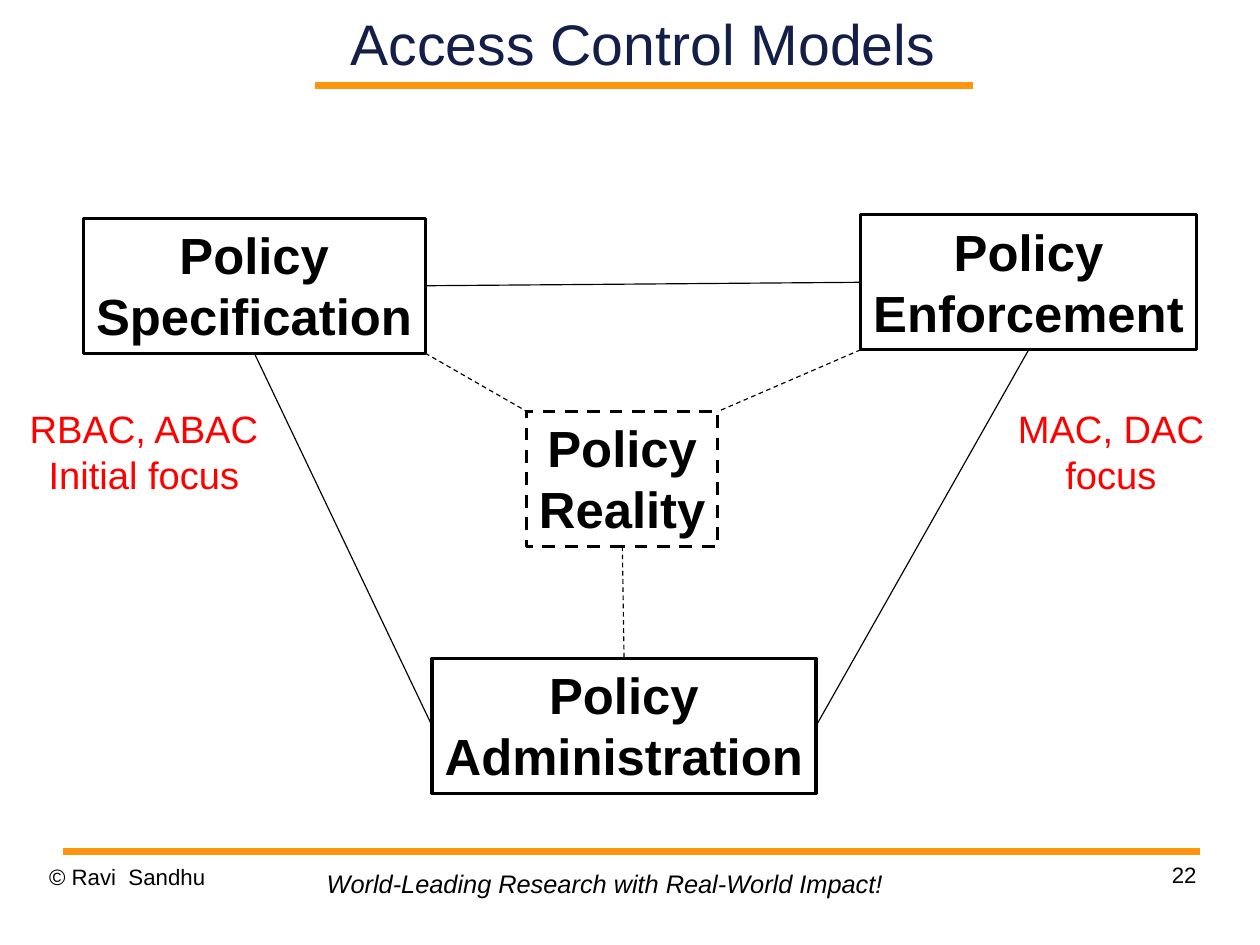
from lxml import etree
from pptx import Presentation
from pptx.dml.color import RGBColor
from pptx.enum import dml, shapes, text
from pptx.oxml.ns import qn
from pptx.util import Inches, Pt

BLACK, RED, NAVY, ORANGE = "000000", "FF0000", "131F49", "FF950E"
LEFT, CENTER, RIGHT = text.PP_ALIGN.LEFT, text.PP_ALIGN.CENTER, text.PP_ALIGN.RIGHT


def write(sp, lines, size, color=BLACK, align=CENTER, bold=False, italic=False,
          wrap=False, inset=True, anchor=text.MSO_ANCHOR.TOP):
    tf = sp.text_frame
    tf.auto_size = text.MSO_AUTO_SIZE.NONE
    tf.word_wrap = wrap
    tf.vertical_anchor = anchor
    if not inset:
        tf.margin_left = tf.margin_right = tf.margin_top = tf.margin_bottom = 0
    for i, line in enumerate(lines):
        p = tf.add_paragraph() if i else tf.paragraphs[0]
        p.alignment = align
        r = p.add_run()
        r.text = line
        r.font.name, r.font.size = "Arial", Pt(size)
        r.font.bold, r.font.italic = bold, italic
        r.font.color.rgb = RGBColor.from_string(color)


def connect(start, end, color=BLACK, width=0.75, dashed=False):
    points = [Inches(v) for v in (*start, *end)]
    cx = s.shapes.add_connector(shapes.MSO_CONNECTOR.STRAIGHT, *points)
    cx.line.color.rgb = RGBColor.from_string(color)
    cx.line.width = Pt(width)
    if dashed:
        cx.line.dash_style = dml.MSO_LINE.DASH
    etree.SubElement(cx._element.spPr, qn("a:effectLst"))
    return cx


# Slide of 28 by 21 centimetres
prs = Presentation()
prs.slide_width, prs.slide_height = Inches(28 / 2.54), Inches(21 / 2.54)
s = prs.slides.add_slide(prs.slide_layouts[5])

# Title
title = s.shapes.title
title.left, title.top = Inches(2.41), Inches(0)
title.width, title.height = Inches(6.43), Inches(0.75)
write(title, ["Access Control Models"], 36, NAVY, wrap=True, inset=False,
      anchor=text.MSO_ANCHOR.MIDDLE)

# Orange rules under the title and above the footer
connect((2.76, 0.75), (8.51, 0.75), ORANGE, 4.31)
connect((0.55, 7.45), (10.5, 7.45), ORANGE, 4.31)

# Policy boxes: left, top, width
boxes = {}
for name, x, y, w in [("Specification", 0.73, 1.91, 2.99),
                      ("Reality", 4.61, 3.6, 1.67),
                      ("Enforcement", 7.53, 1.88, 2.94),
                      ("Administration", 3.78, 5.76, 3.36)]:
    sp = s.shapes.add_shape(shapes.MSO_SHAPE.RECTANGLE,
                            Inches(x), Inches(y), Inches(w), Inches(1.18))
    sp.shadow.inherit = False
    sp.fill.background()
    sp.line.color.rgb = RGBColor.from_string(BLACK)
    sp.line.width = Pt(2)
    if name == "Reality":
        sp.line.dash_style = dml.MSO_LINE.DASH
    write(sp, ["Policy", name], 32, bold=True)
    boxes[name] = sp

# Links glued to box sides (0 top, 1 left, 2 bottom, 3 right)
for a, side_a, b, side_b, dashed in [
        ("Specification", 2, "Administration", 1, False),
        ("Specification", 3, "Enforcement", 1, False),
        ("Enforcement", 2, "Administration", 3, False),
        ("Reality", 2, "Administration", 0, True)]:
    cx = connect((0, 0), (1, 1), dashed=dashed)
    cx.begin_connect(boxes[a], side_a)
    cx.end_connect(boxes[b], side_b)

# Dashed links between box corners
connect((3.72, 3.09), (4.61, 3.6), dashed=True)
connect((7.53, 3.06), (6.28, 3.6), dashed=True)

# Red focus labels
for lines, x, w in [(["RBAC, ABAC", "Initial focus"], 0.11, 2.3),
                    (["MAC, DAC", "focus"], 8.65, 2.14)]:
    label = s.shapes.add_textbox(Inches(x), Inches(3.5), Inches(w), Inches(0.91))
    write(label, lines, 24, RED, wrap=True)

# Footer
for line, x, y, align in [("© Ravi  Sandhu", 0.43, 7.55, LEFT),
                          ("22", 7.9, 7.53, RIGHT)]:
    note = s.shapes.add_textbox(Inches(x), Inches(y), Inches(2.57), Inches(0.57))
    write(note, [line], 14, align=align, wrap=True, inset=False)
    note.text_frame.paragraphs[0].line_spacing = 1.01
motto = s.shapes.add_textbox(Inches(2.76), Inches(7.55), Inches(5.08), Inches(0.37))
write(motto, ["World-Leading Research with Real-World Impact!"], 16,
      align=LEFT, italic=True)

prs.save("out.pptx")
